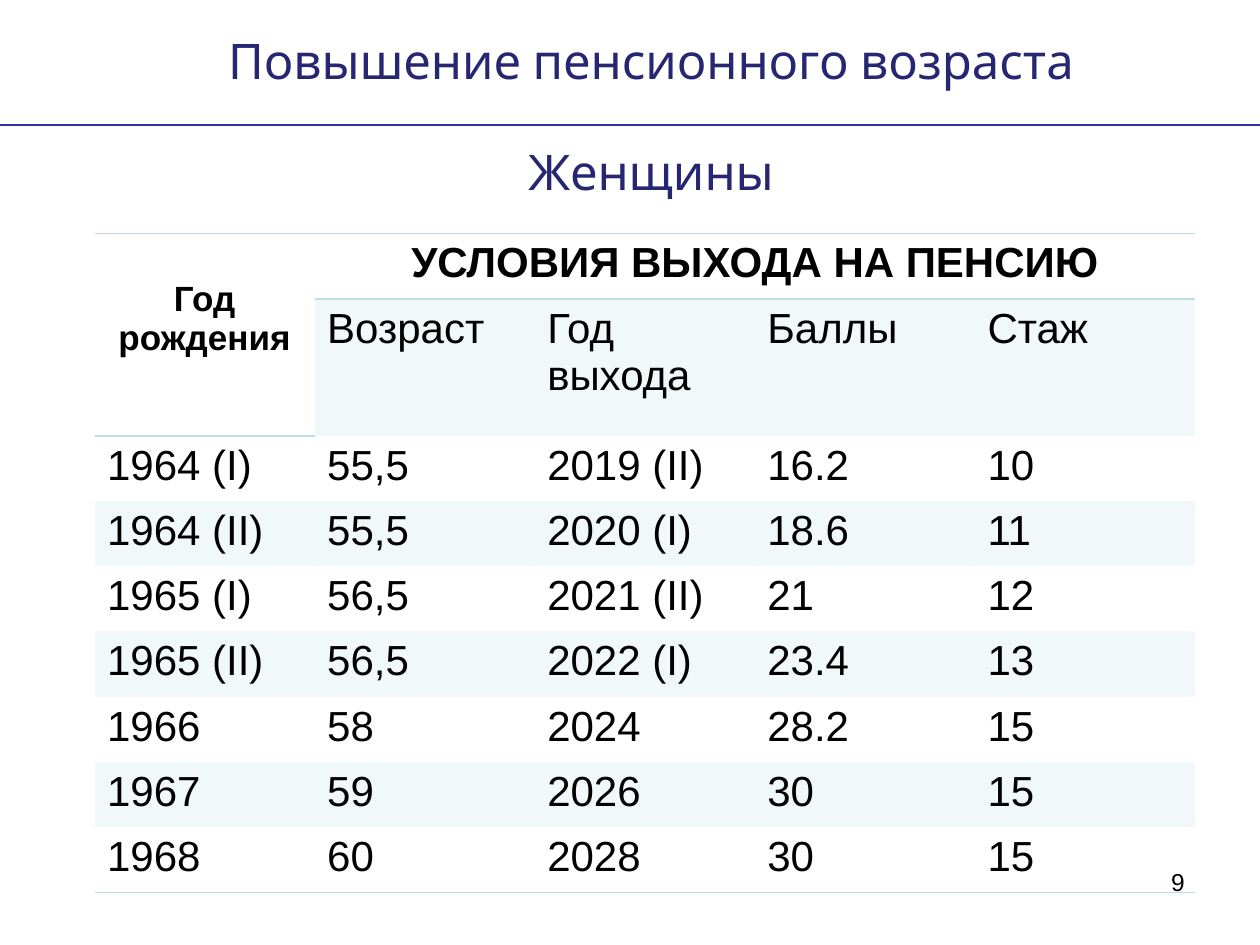
from lxml.etree import SubElement
from pptx import Presentation
from pptx.dml.color import RGBColor
from pptx.enum.shapes import MSO_CONNECTOR
from pptx.enum.text import MSO_ANCHOR, PP_ALIGN
from pptx.oxml.ns import qn
from pptx.util import Pt

NAVY, RULE, BLACK, AQUA = "262673", "333399", "000000", "BBE0E3"
PLAIN_TABLE = "{2D5ABB26-0587-4C30-8999-92F81FD0307C}"
HEADINGS = ["Возраст", "Год выхода", "Баллы", "Стаж"]
CONDITIONS = [
    ["1964 (I)", "55,5", "2019 (II)", "16.2", "10"],
    ["1964 (II)", "55,5", "2020 (I)", "18.6", "11"],
    ["1965 (I)", "56,5", "2021 (II)", "21", "12"],
    ["1965 (II)", "56,5", "2022 (I)", "23.4", "13"],
    ["1966", "58", "2024", "28.2", "15"],
    ["1967", "59", "2026", "30", "15"],
    ["1968", "60", "2028", "30", "15"],
]


def color(value):
    return RGBColor.from_string(value)


def style_text(frame, size, tint=BLACK, font="Arial", bold=False, align=PP_ALIGN.LEFT):
    for para in frame.paragraphs:
        para.alignment = align
        for span in para.runs:
            span.font.size = Pt(size)
            span.font.name = font
            span.font.bold = bold
            span.font.color.rgb = color(tint)


def add_text(page, box, text, anchor=MSO_ANCHOR.TOP, **style):
    frame = page.shapes.add_textbox(*map(Pt, box)).text_frame
    frame.word_wrap = True
    frame.vertical_anchor = anchor
    frame.text = text
    style_text(frame, **style)
    return frame


def add_title(page, box):
    frame = add_text(page, box, "Повышение пенсионного возраста\nЖенщины",
                     MSO_ANCHOR.MIDDLE, size=28, tint=NAVY, font="Karla",
                     align=PP_ALIGN.CENTER)
    frame.paragraphs[1].space_before = Pt(29.5)


def add_rule(page, width, top):
    rule = page.shapes.add_connector(MSO_CONNECTOR.STRAIGHT, Pt(width), Pt(top), Pt(0), Pt(top))
    rule.line.color.rgb = color(RULE)
    rule.line.width = Pt(1.5)
    SubElement(rule.element.spPr, qn("a:effectLst"))


def set_border(cell, *edges):
    """Draw the named edges, given in the order lnT, lnB."""
    properties = cell._tc.get_or_add_tcPr()
    for edge in edges:
        line = SubElement(properties, qn(f"a:{edge}"), w=str(Pt(1)))
        fill = SubElement(line, qn("a:solidFill"))
        SubElement(fill, qn("a:srgbClr"), val=AQUA)


def shade(cell):
    cell.fill.solid()
    cell.fill.fore_color.rgb = color(AQUA)
    tint = cell._tc.tcPr.find(qn("a:solidFill")).find(qn("a:srgbClr"))
    SubElement(tint, qn("a:alpha"), val="20000")


def add_conditions_table(page, left, top, column_width, row_height, heading_height):
    rows = [["Год рождения", "УСЛОВИЯ ВЫХОДА НА ПЕНСИЮ", "", "", ""], ["", *HEADINGS], *CONDITIONS]
    columns = len(rows[0])
    last = len(rows) - 1
    height = row_height * last + heading_height
    frame = page.shapes.add_table(len(rows), columns, Pt(left), Pt(top),
                                  Pt(column_width * columns), Pt(height))
    table = frame.table
    next(frame.element.iter(qn("a:tableStyleId"))).text = PLAIN_TABLE
    for column in table.columns:
        column.width = Pt(column_width)
    for r, values in enumerate(rows):
        table.rows[r].height = Pt(heading_height if r == 1 else row_height)
        for c, value in enumerate(values):
            cell = table.cell(r, c)
            cell.text = value
            style_text(cell.text_frame, 24)
            if r == 0:
                set_border(cell, "lnT", "lnB")
            elif r == last or (r, c) == (1, 0):
                set_border(cell, "lnB")
            if r % 2 and (r, c) != (1, 0):
                shade(cell)

    birth_year, conditions = table.cell(0, 0), table.cell(0, 1)
    birth_year.merge(table.cell(1, 0))
    conditions.merge(table.cell(0, columns - 1))
    birth_year.margin_top = Pt(26.6)
    style_text(birth_year.text_frame, 20, bold=True, align=PP_ALIGN.CENTER)
    style_text(conditions.text_frame, 24, bold=True, align=PP_ALIGN.CENTER)


def main():
    deck = Presentation()
    deck.slide_width, deck.slide_height = Pt(720), Pt(540)
    page = deck.slides.add_slide(deck.slide_layouts[6])
    add_title(page, (48, 21, 648, 90))
    add_rule(page, 720, 71.5)
    add_conditions_table(page, 54, 133.5, 125.8, 37.3, 73.8)
    add_text(page, (516, 492, 168, 37.5), "9", size=14, align=PP_ALIGN.RIGHT)
    deck.save("out.pptx")


if __name__ == "__main__":
    main()
